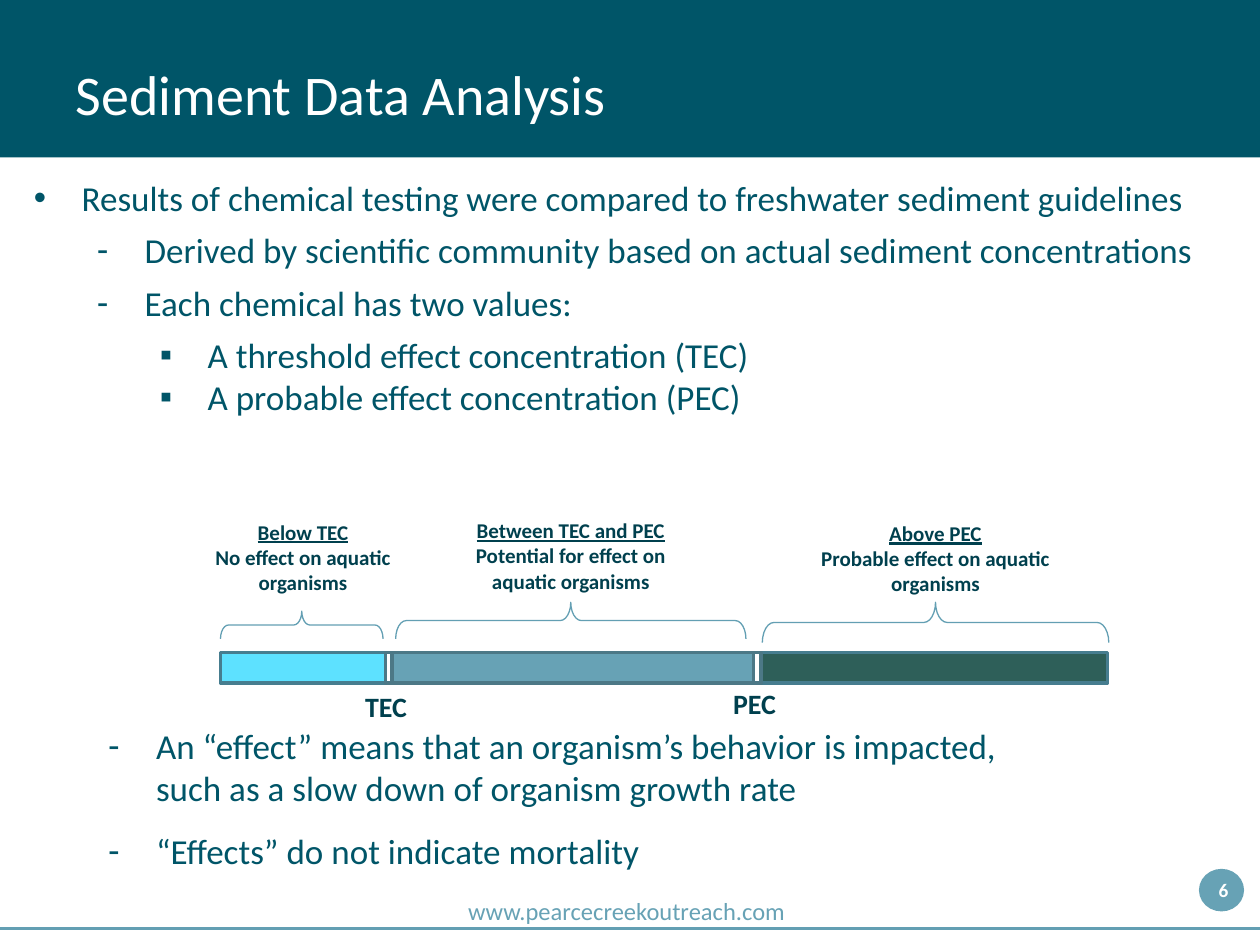
from dataclasses import dataclass

import lxml.etree
import pptx
import pptx.dml.color
import pptx.enum.shapes
import pptx.enum.text
import pptx.oxml.ns
import pptx.util

Inches = pptx.util.Inches
Pt = pptx.util.Pt
Kind = pptx.enum.shapes.MSO_SHAPE
Align = pptx.enum.text.PP_ALIGN
qn = pptx.oxml.ns.qn

FONT = "Calibri"
HANG = 0.38
COLORS = {
    "deep": "005568", "ink": "00404E", "teal": "67A2B5", "rule": "639FB3",
    "edge": "467D8F", "side": "4C7886", "cyan": "5DE1FF", "green": "2E5F59",
    "white": "FFFFFF",
}


@dataclass
class Box:
    left: float
    top: float
    width: float
    height: float

    def place(self) -> tuple:
        return tuple(Inches(n) for n in (self.left, self.top, self.width, self.height))


@dataclass
class Style:
    size: float
    color: str
    bold: bool = False
    align: Align = Align.LEFT


@dataclass
class Point:
    text: str
    mark: str
    indent: float
    after: float = 0


@dataclass
class Zone:
    name: str
    effect: str
    label: Box
    brace: Box  # extent as seen, opening downward


@dataclass
class Part:
    left: float
    width: float
    fill: str
    edge: str


def rgb(name: str) -> pptx.dml.color.RGBColor:
    return pptx.dml.color.RGBColor.from_string(COLORS[name])


def add_shape(slide, kind: Kind, box: Box, fill: str = "", edge: str = "", weight: float = 2):
    shape = slide.shapes.add_shape(kind, *box.place())
    shape.shadow.inherit = False
    if fill:
        shape.fill.solid()
        shape.fill.fore_color.rgb = rgb(fill)
    else:
        shape.fill.background()
    if edge:
        shape.line.color.rgb = rgb(edge)
        shape.line.width = Pt(weight)
    else:
        shape.line.fill.background()
    return shape


def add_text(slide, box: Box, text: str, style: Style, wrap: bool = True):
    frame = slide.shapes.add_textbox(*box.place()).text_frame
    frame.word_wrap = wrap
    frame.text = text
    for para in frame.paragraphs:
        para.alignment = style.align
        for run in para.runs:
            run.font.name = FONT
            run.font.size = Pt(style.size)
            run.font.bold = style.bold
            run.font.color.rgb = rgb(style.color)
    return frame


def add_points(slide, box: Box, points: list[Point], style: Style) -> None:
    frame = add_text(slide, box, "\n".join(p.text for p in points), style)
    for para, point in zip(frame.paragraphs, points):
        para.space_after = Pt(point.after)
        props = para._p.get_or_add_pPr()
        props.set("marL", str(Inches(point.indent)))
        props.set("indent", str(Inches(-HANG)))
        face = lxml.etree.SubElement(props, qn("a:buFont"))
        face.set("typeface", "Arial")
        mark = lxml.etree.SubElement(props, qn("a:buChar"))
        mark.set("char", point.mark)


def add_zone(slide, zone: Zone) -> None:
    style = Style(12, "ink", True, Align.CENTER)
    frame = add_text(slide, zone.label, f"{zone.name}\n{zone.effect}", style)
    frame.paragraphs[0].runs[0].font.underline = True
    # A right brace turned to point up swaps its width and height
    seen = zone.brace
    turned = Box(seen.left + (seen.width - seen.height) / 2,
                 seen.top + (seen.height - seen.width) / 2, seen.height, seen.width)
    brace = add_shape(slide, Kind.RIGHT_BRACE, turned, edge="rule", weight=0.75)
    brace.rotation = 270
    brace.adjustments[0] = 0.29
    brace.adjustments[1] = 0.5


def add_rule(slide, y: float) -> None:
    rule = slide.shapes.add_connector(
        pptx.enum.shapes.MSO_CONNECTOR.STRAIGHT, 0, Inches(y), Inches(10), Inches(y))
    rule.line.color.rgb = rgb("rule")
    rule.line.width = Pt(1.5)
    lxml.etree.SubElement(rule._element.spPr, qn("a:effectLst"))


TOP_POINTS = [
    Point("Results of chemical testing were compared to freshwater sediment guidelines",
          "•", 0.38, 6),
    Point("Derived by scientific community based on actual sediment concentrations",
          "-", 0.88, 6),
    Point("Each chemical has two values:", "-", 0.88, 6),
    Point("A threshold effect concentration (TEC)", "▪", 1.38),
    Point("A probable effect concentration (PEC)", "▪", 1.38),
]
END_POINTS = [
    Point("An “effect” means that an organism’s behavior is impacted, "
          "such as a slow down of organism growth rate", "-", 0.88, 12),
    Point("“Effects” do not indicate mortality", "-", 0.88, 12),
]
ZONES = [
    Zone("Below TEC", "No effect on aquatic organisms",
         Box(1.54, 4.07, 1.73, 0.71), Box(1.75, 4.85, 1.29, 0.22)),
    Zone("Between TEC and PEC", "Potential for effect on aquatic organisms",
         Box(3.42, 4.06, 2.22, 0.71), Box(3.14, 4.78, 2.78, 0.29)),
    Zone("Above PEC", "Probable effect on aquatic organisms",
         Box(6.41, 4.08, 2.03, 0.71), Box(6.05, 4.78, 2.75, 0.32)),
]
PARTS = [
    Part(6.02, 2.77, "green", "edge"),
    Part(3.11, 2.88, "teal", "side"),
    Part(1.75, 1.31, "cyan", "edge"),
    Part(5.98, 0.06, "white", "side"),
    Part(3.06, 0.05, "white", "side"),
]


def main() -> None:
    deck = pptx.Presentation()
    deck.slide_width, deck.slide_height = Inches(10), Inches(7.5)
    slide = deck.slides.add_slide(deck.slide_layouts[6])

    # Footer
    add_rule(slide, 7.37)
    add_shape(slide, Kind.OVAL, Box(9.53, 6.91, 0.33, 0.31), "teal", "teal")
    add_text(slide, Box(9.52, 6.92, 0.38, 0.29), "6",
             Style(11, "white", True, Align.CENTER))
    add_text(slide, Box(0.01, 7.06, 9.93, 0.34), "www.pearcecreekoutreach.com",
             Style(14, "teal", align=Align.CENTER))

    # Title band
    add_shape(slide, Kind.RECTANGLE, Box(0, 0, 10, 1.25), "deep")
    title = add_text(slide, Box(0.6, 0.42, 8.75, 0.75), "Sediment Data Analysis",
                     Style(32, "white"))
    title.margin_left = 0

    # Bullet lists
    body = Style(20, "deep")
    add_points(slide, Box(0.17, 1.35, 9.73, 2.71), TOP_POINTS, body)
    add_points(slide, Box(0.26, 5.7, 8.19, 1.28), END_POINTS, body)

    # Effect scale
    for part in PARTS:
        add_shape(slide, Kind.RECTANGLE, Box(part.left, 5.18, part.width, 0.24),
                  part.fill, part.edge)
    for zone in ZONES:
        add_zone(slide, zone)
    for name, left, top in (("TEC", 2.8, 5.42), ("PEC", 5.72, 5.4)):
        add_text(slide, Box(left, top, 0.58, 0.32), name, Style(16, "ink", True), False)

    deck.save("out.pptx")


if __name__ == "__main__":
    main()
